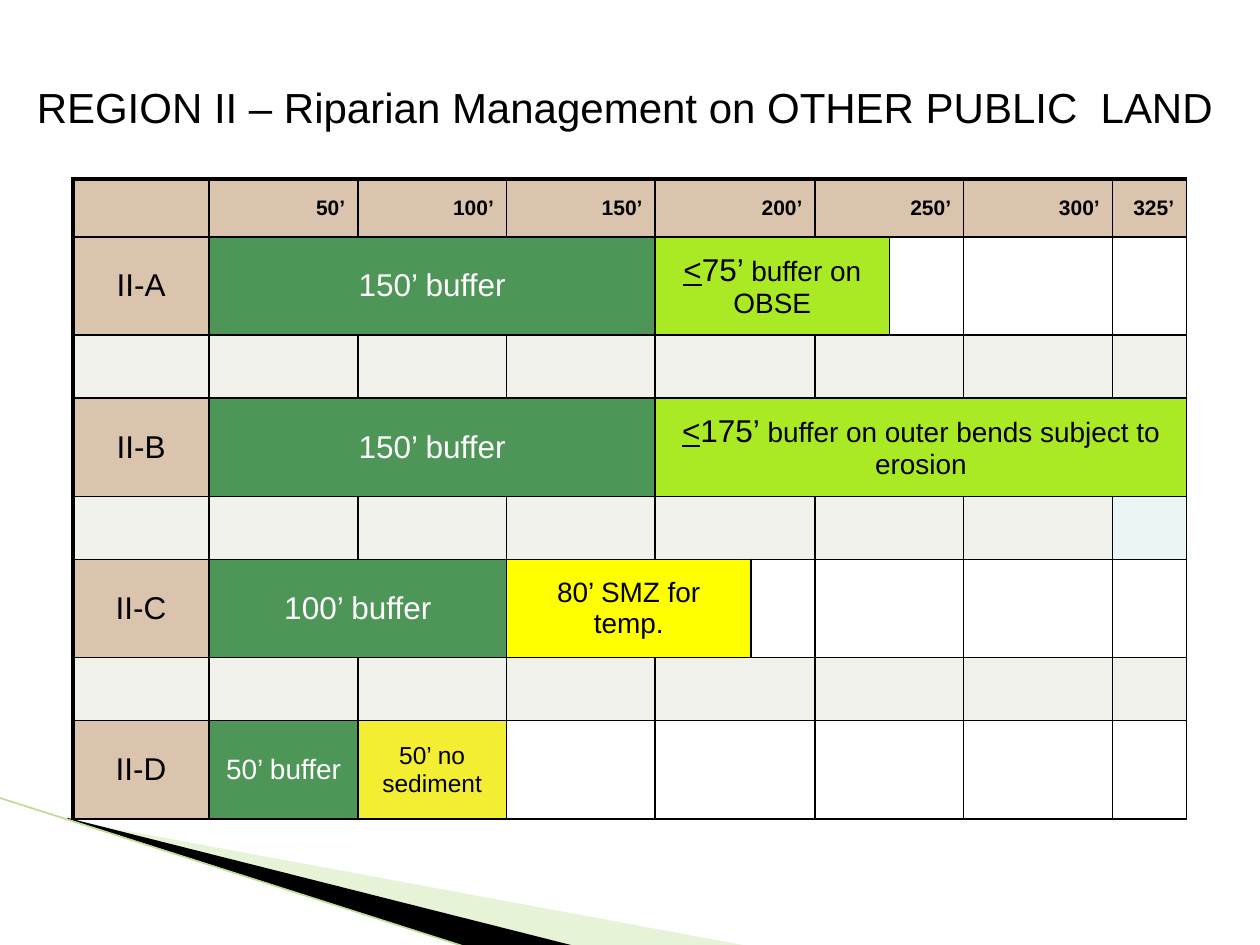
from lxml.etree import SubElement
from pptx import Presentation
from pptx.dml.color import RGBColor
from pptx.enum.shapes import MSO_CONNECTOR
from pptx.enum.text import MSO_ANCHOR, PP_ALIGN
from pptx.oxml.ns import qn
from pptx.util import Inches, Pt

THEME = {
    "font": "Arial", "ink": "000000", "light": "FFFFFF",
    "tan": "DBC4AE", "green": "4E9657", "lime": "AAEA25",
    "yellow": "FFFF00", "gold": "F3EE31", "gap": "F0F1EB", "ice": "EAF5F6",
    "swoosh": "C3E19D", "rule": "BDDC94",
    "title": 24, "label": 18, "note": 16, "small": 14, "head": 12,
    "thin": 1, "thick": 2.25,
}

TITLE = "REGION II – Riparian Management on OTHER PUBLIC  LAND"
COLUMNS = [1.08, 1.18, 1.18, 1.18, 0.76, 0.51, 0.59, 0.59, 1.18, 0.59]
HEAD_HEIGHT, ZONE_HEIGHT, GAP_HEIGHT = 0.46, 0.78, 0.5

# Cells: (columns spanned, fill, runs); runs: (text, size, colour, underlined)
EMPTY = (1, None, [])
EMPTY_PAIR = (2, None, [])


def band(span, fill, text, size="label", colour="ink"):
    return (span, fill, [(text, size, colour, False)])


def limit(span, distance, rest):
    return (span, "lime", [("<", "label", "ink", True),
                           (distance, "label", "ink", False),
                           (rest, "note", "ink", False)])


def gap(last="gap"):
    return [(span, "gap", []) for span in (1, 1, 1, 1, 2, 2, 1)] + [(1, last, [])]


HEAD = [(1, "tan", [])] + [
    band(span, "tan", text, "head")
    for text, span in [("50’", 1), ("100’", 1), ("150’", 1), ("200’", 2),
                       ("250’", 2), ("300’", 1), ("325’", 1)]]
ROWS = [
    HEAD,
    [band(1, "tan", "II-A"), band(3, "green", "150’ buffer", colour="light"),
     limit(3, "75’ ", "buffer on OBSE"), EMPTY, EMPTY, EMPTY],
    gap(),
    [band(1, "tan", "II-B"), band(3, "green", "150’ buffer", colour="light"),
     limit(6, "175’ ", "buffer on outer bends subject to erosion")],
    gap("ice"),
    [band(1, "tan", "II-C"), band(2, "green", "100’ buffer", colour="light"),
     band(2, "yellow", "80’ SMZ for temp.", "note"),
     EMPTY, EMPTY_PAIR, EMPTY, EMPTY],
    gap(),
    [band(1, "tan", "II-D"), band(1, "green", "50’ buffer", "note", "light"),
     band(1, "gold", "50’ no sediment", "small"),
     EMPTY, EMPTY_PAIR, EMPTY_PAIR, EMPTY, EMPTY],
]

# Corner decoration: (fill, opacity in percent, points)
WEDGES = [
    ("swoosh", 40, [(0.55, 6.51), (5.95, 7.51), (4.56, 7.51), (0.55, 6.5)]),
    ("ink", 100, [(0.53, 6.49), (4.57, 7.51), (3.72, 7.52), (0.54, 6.5)]),
]


def rgb(name):
    return RGBColor.from_string(THEME[name])


def write(para, text, size, colour, **extra):
    span = para.add_run()
    span.text = text
    span.font.color.rgb = rgb(colour)
    style = {"name": THEME["font"], "size": Pt(THEME[size]), **extra}
    for key, value in style.items():
        setattr(span.font, key, value)


def add_borders(cell, row, column):
    props = cell._tc.get_or_add_tcPr()
    for side, outer in (("L", column == 0), ("R", False), ("T", row == 0), ("B", False)):
        width = Pt(THEME["thick" if outer else "thin"])
        line = SubElement(props, qn(f"a:ln{side}"), w=str(int(width)))
        fill = SubElement(line, qn("a:solidFill"))
        SubElement(fill, qn("a:srgbClr"), val=THEME["ink"])


def paint(cell, fill):
    if fill:
        cell.fill.solid()
        cell.fill.fore_color.rgb = rgb(fill)
    else:
        cell.fill.background()


def add_decoration(page):
    for fill, opacity, points in WEDGES:
        start, *rest = [(Inches(x), Inches(y)) for x, y in points]
        builder = page.shapes.build_freeform(*start)
        builder.add_line_segments(rest, close=True)
        wedge = builder.convert_to_shape()
        wedge.shadow.inherit = False
        wedge.line.fill.background()
        wedge.fill.solid()
        wedge.fill.fore_color.rgb = rgb(fill)
        if opacity < 100:
            colour = wedge._element.spPr.find(".//" + qn("a:srgbClr"))
            SubElement(colour, qn("a:alpha"), val=str(opacity * 1000))
    rule = page.shapes.add_connector(MSO_CONNECTOR.STRAIGHT, Inches(-0.01), Inches(6.33),
                                     Inches(3.71), Inches(7.52))
    rule.line.color.rgb = rgb("rule")
    rule.line.width = Pt(0.95)
    SubElement(rule._element.spPr, qn("a:effectLst"))


def add_title(page):
    box = page.shapes.title
    place = {"left": 0.17, "top": 0.59, "width": 9.58, "height": 0.51}
    for key, value in place.items():
        setattr(box, key, Inches(value))
    box.text_frame.word_wrap = False
    box.text_frame.vertical_anchor = MSO_ANCHOR.MIDDLE
    para = box.text_frame.paragraphs[0]
    para.alignment = PP_ALIGN.CENTER
    write(para, TITLE, "title", "ink")


def add_zone_table(page):
    heights = [HEAD_HEIGHT] + [GAP_HEIGHT if i % 2 else ZONE_HEIGHT
                               for i in range(len(ROWS) - 1)]
    table = page.shapes.add_table(len(ROWS), len(COLUMNS), Inches(0.58), Inches(1.42),
                                  Inches(sum(COLUMNS)), Inches(sum(heights))).table
    table.first_row = table.horz_banding = False
    for column, width in zip(table.columns, COLUMNS):
        column.width = Inches(width)
    for r, (height, cells) in enumerate(zip(heights, ROWS)):
        table.rows[r].height = Inches(height)
        c = 0
        for span, fill, runs in cells:
            cell = table.cell(r, c)
            for k in range(c, c + span):
                add_borders(table.cell(r, k), r, k)
                paint(table.cell(r, k), fill)
            if span > 1:
                cell.merge(table.cell(r, c + span - 1))
            cell.vertical_anchor = MSO_ANCHOR.MIDDLE
            para = cell.text_frame.paragraphs[0]
            para.alignment = PP_ALIGN.RIGHT if r == 0 else PP_ALIGN.CENTER
            for text, size, colour, underlined in runs:
                write(para, text, size, colour, bold=r == 0, underline=underlined)
            c += span


def main():
    deck = Presentation()
    deck.slide_width, deck.slide_height = Inches(10), Inches(7.5)
    page = deck.slides.add_slide(deck.slide_layouts[5])
    add_decoration(page)
    add_title(page)
    add_zone_table(page)
    deck.save("out.pptx")


if __name__ == "__main__":
    main()
